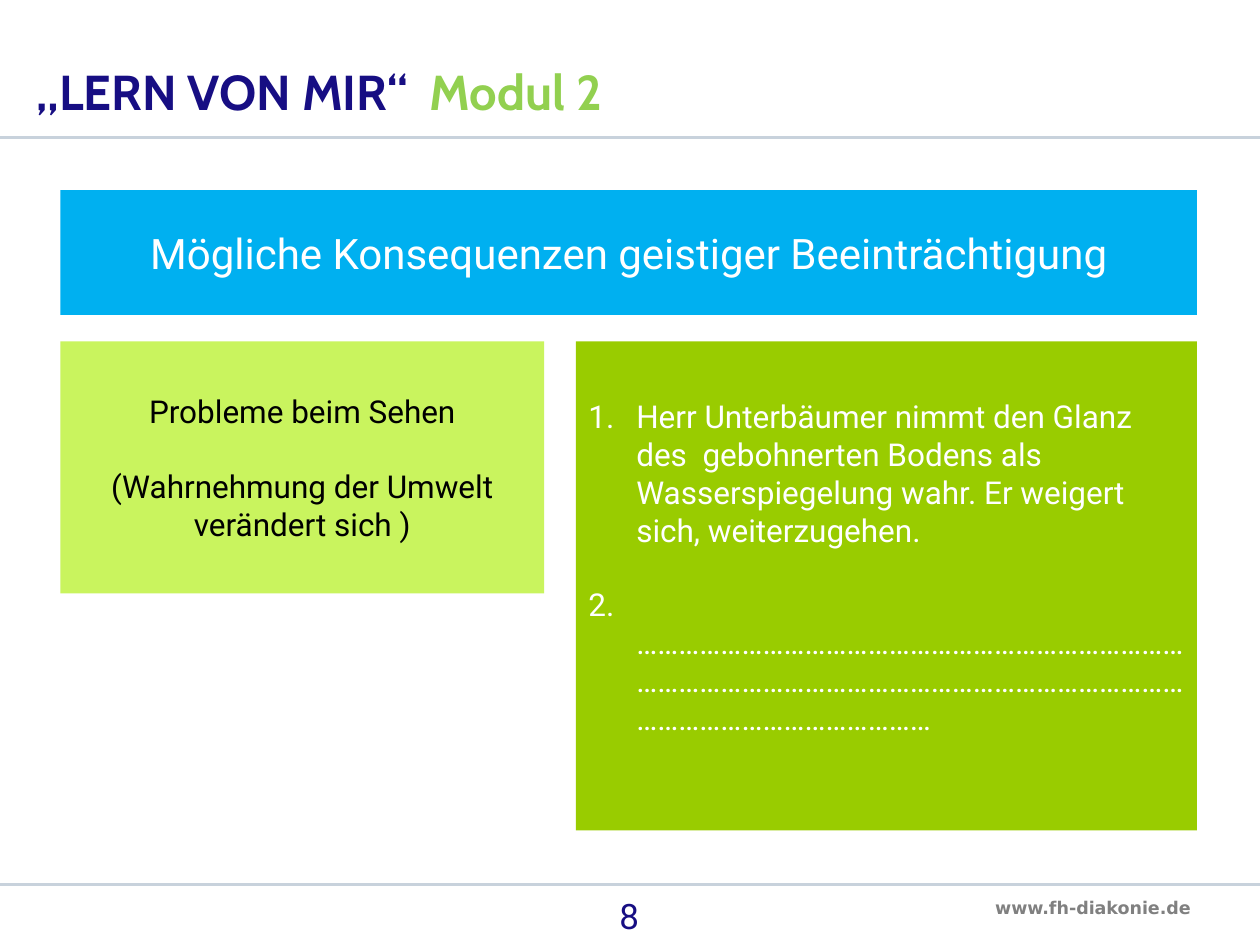
from dataclasses import dataclass

from lxml import etree
from pptx import Presentation
from pptx.dml.color import RGBColor
from pptx.enum.shapes import MSO_CONNECTOR, MSO_SHAPE
from pptx.enum.text import MSO_ANCHOR, MSO_AUTO_SIZE, PP_ALIGN
from pptx.oxml.ns import qn
from pptx.util import Inches, Pt

LEFT, CENTER = PP_ALIGN.LEFT, PP_ALIGN.CENTER
TOP, MIDDLE, BOTTOM = MSO_ANCHOR.TOP, MSO_ANCHOR.MIDDLE, MSO_ANCHOR.BOTTOM
RECTANGLE, STRAIGHT = MSO_SHAPE.RECTANGLE, MSO_CONNECTOR.STRAIGHT
NO_AUTOFIT = MSO_AUTO_SIZE.NONE


@dataclass(frozen=True)
class Theme:
    heading_font: str = "Cabin"
    body_font: str = "Roboto"
    footer_font: str = "DejaVu Sans"
    navy: str = "170E83"
    title_green: str = "92D050"
    blue: str = "00B0F0"
    lime: str = "C9F45E"
    green: str = "99CC00"
    rule: str = "C8D2DC"
    gray: str = "808080"
    white: str = "FFFFFF"
    black: str = "000000"
    title_size: int = 28
    banner_size: int = 24
    number_size: int = 20
    body_size: int = 18
    footer_size: int = 10
    paragraph_gap: int = 21


THEME = Theme()


@dataclass(frozen=True)
class Box:
    left: float
    top: float
    width: float
    height: float


@dataclass(frozen=True)
class Style:
    font: str
    size: int
    color: str
    bold: bool = False
    align: PP_ALIGN = CENTER


@dataclass(frozen=True)
class Panel:
    box: Box
    fill: str
    style: Style
    paragraphs: tuple[str, ...]


MARGIN, RIGHT_EDGE, PANEL_TOP = 0.48, 9.5, 2.71
EXAMPLES_LEFT = 4.57
RULE_TOPS = (1.09, 7.02)
LIST_INDENT = 0.38

PANELS = (
    Panel(Box(MARGIN, 1.51, RIGHT_EDGE - MARGIN, 0.99), THEME.blue,
          Style(THEME.body_font, THEME.banner_size, THEME.white),
          ("Mögliche Konsequenzen geistiger Beeinträchtigung",)),
    Panel(Box(MARGIN, PANEL_TOP, 3.84, 2), THEME.lime,
          Style(THEME.body_font, THEME.body_size, THEME.black),
          ("Probleme beim Sehen", "(Wahrnehmung der Umwelt verändert sich )")),
)
EXAMPLES = Panel(
    Box(EXAMPLES_LEFT, PANEL_TOP, RIGHT_EDGE - EXAMPLES_LEFT, 3.88), THEME.green,
    Style(THEME.body_font, THEME.body_size, THEME.white, align=LEFT),
    ("Herr Unterbäumer nimmt den Glanz des  gebohnerten Bodens als "
     "Wasserspiegelung wahr. Er weigert sich, weiterzugehen.",
     " ………………………………………………………………………………………………………………………………………………………………………………"),
)


def place(sp, box: Box) -> None:
    sp.left, sp.top = Inches(box.left), Inches(box.top)
    sp.width, sp.height = Inches(box.width), Inches(box.height)


def format_run(r, style: Style) -> None:
    r.font.name, r.font.size, r.font.bold = style.font, Pt(style.size), style.bold
    r.font.color.rgb = RGBColor.from_string(style.color)


def write(tf, paragraphs: tuple[str, ...], style: Style, anchor: MSO_ANCHOR,
          wrap: bool = True) -> None:
    tf.text = "\n".join(paragraphs)
    tf.auto_size, tf.word_wrap, tf.vertical_anchor = NO_AUTOFIT, wrap, anchor
    for i, p in enumerate(tf.paragraphs):
        p.alignment = style.align
        p.space_before = Pt(THEME.paragraph_gap if i else 0)
        for r in p.runs:
            format_run(r, style)


def add_panel(slide, panel: Panel) -> None:
    box = panel.box
    sp = slide.shapes.add_shape(RECTANGLE, Inches(box.left), Inches(box.top),
                                Inches(box.width), Inches(box.height))
    sp.shadow.inherit = False
    sp.fill.solid()
    sp.fill.fore_color.rgb = RGBColor.from_string(panel.fill)
    sp.line.fill.background()
    write(sp.text_frame, panel.paragraphs, panel.style, MIDDLE)


def add_label(slide, box: Box, text: str, style: Style, wrap: bool = True) -> None:
    sp = slide.shapes.add_textbox(Inches(box.left), Inches(box.top),
                                  Inches(box.width), Inches(box.height))
    write(sp.text_frame, (text,), style, TOP, wrap)


def add_rule(slide, top: float, width: int) -> None:
    line = slide.shapes.add_connector(STRAIGHT, 0, Inches(top), width, Inches(top))
    line.line.color.rgb = RGBColor.from_string(THEME.rule)
    line.line.width = Pt(1.5)
    etree.SubElement(line._element.spPr, qn("a:effectLst"))


def number_paragraph(p) -> None:
    pPr = p._p.get_or_add_pPr()
    pPr.set("marL", str(Inches(LIST_INDENT)))
    pPr.set("indent", str(-Inches(LIST_INDENT)))
    etree.SubElement(pPr, qn("a:buFont"), typeface="+mj-lt")
    etree.SubElement(pPr, qn("a:buAutoNum"), type="arabicPeriod")


def fill_title(sp) -> None:
    place(sp, Box(0.19, 0.43, 6.67, 0.58))
    style = Style(THEME.heading_font, THEME.title_size, THEME.navy, True, LEFT)
    write(sp.text_frame, ("„LERN VON MIR“  ",), style, BOTTOM)
    p = sp.text_frame.paragraphs[0]
    p.line_spacing = 0.9
    r = p.add_run()
    r.text = "Modul 2"
    format_run(r, Style(style.font, style.size, THEME.title_green, True))


def fill_examples(sp, panel: Panel) -> None:
    place(sp, panel.box)
    sp.fill.solid()
    sp.fill.fore_color.rgb = RGBColor.from_string(panel.fill)
    tf = sp.text_frame
    write(tf, panel.paragraphs, panel.style, MIDDLE)
    tf.margin_bottom = Inches(0.35)
    for p in tf.paragraphs:
        number_paragraph(p)


def main() -> None:
    prs = Presentation()
    prs.slide_width, prs.slide_height = Inches(10), Inches(7.5)
    s = prs.slides.add_slide(prs.slide_layouts[1])
    for top in RULE_TOPS:
        add_rule(s, top, prs.slide_width)
    fill_title(s.shapes.title)
    for panel in PANELS:
        add_panel(s, panel)
    fill_examples(s.placeholders[1], EXAMPLES)
    add_label(s, Box(3.83, 7.05, 2.33, 0.45), "8",
              Style(THEME.body_font, THEME.number_size, THEME.navy))
    add_label(s, Box(7.8, 7.07, 1.78, 0.27), "www.fh-diakonie.de",
              Style(THEME.footer_font, THEME.footer_size, THEME.gray, True, LEFT),
              wrap=False)
    prs.save("out.pptx")


if __name__ == "__main__":
    main()
